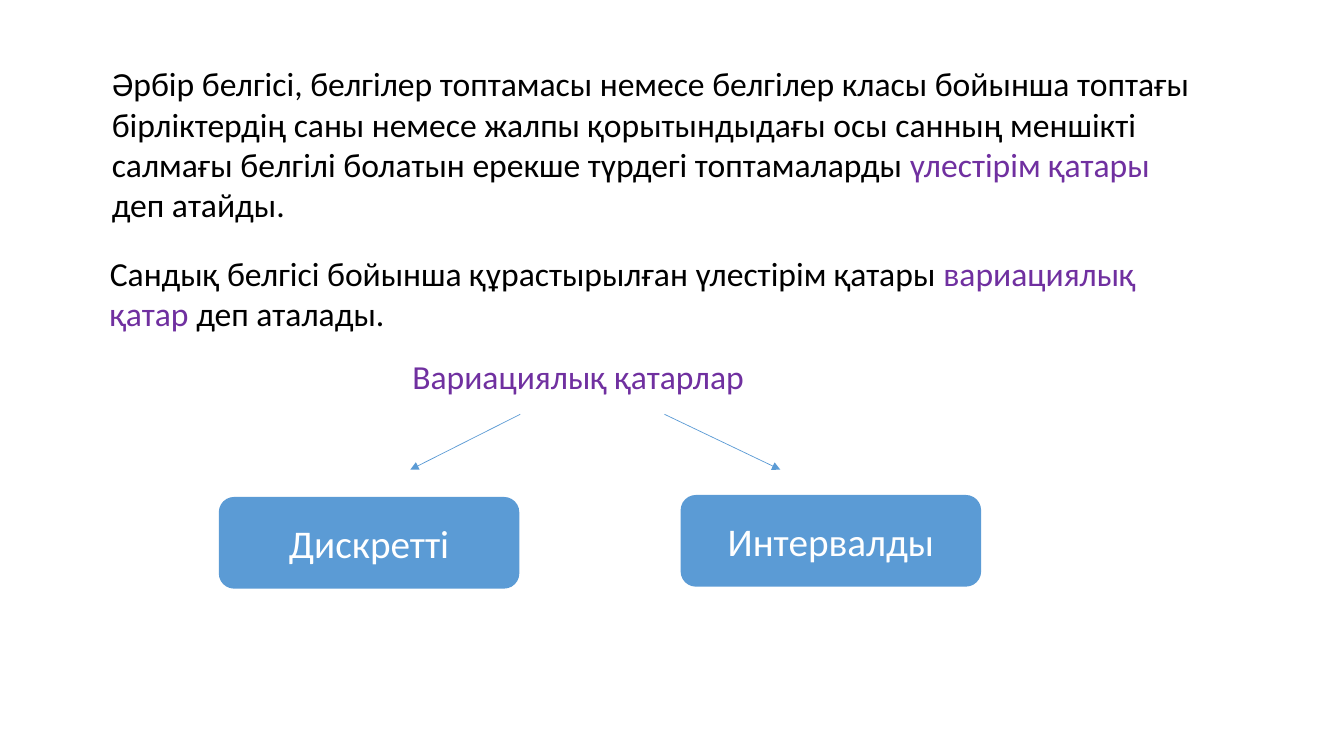
from lxml import etree
from pptx import Presentation
from pptx.dml.color import RGBColor
from pptx.enum.shapes import MSO_CONNECTOR, MSO_SHAPE
from pptx.enum.text import MSO_ANCHOR, MSO_AUTO_SIZE, PP_ALIGN
from pptx.oxml.ns import qn
from pptx.util import Inches, Pt

STRAIGHT = MSO_CONNECTOR.STRAIGHT
ROUNDED = MSO_SHAPE.ROUNDED_RECTANGLE
TOP, MIDDLE = MSO_ANCHOR.TOP, MSO_ANCHOR.MIDDLE
LEFT, CENTER = PP_ALIGN.LEFT, PP_ALIGN.CENTER
NO_FIT = MSO_AUTO_SIZE.NONE

WIDTH, HEIGHT = Inches(13.33), Inches(7.5)
TITLE_ONLY = 5
BLACK, PURPLE, BLUE, WHITE = "000000", "7030A0", "5B9BD5", "FFFFFF"

DEFINITIONS = [
    ((7.58, 7.73, 82.6, 22.93), [
        ("Әрбір белгісі, белгілер топтамасы немесе белгілер класы бойынша топтағы "
         "бірліктердің саны немесе жалпы қорытындыдағы осы санның меншікті салмағы "
         "белгілі болатын ерекше түрдегі топтамаларды ", BLACK),
        ("үлестірім қатары ", PURPLE),
        ("деп атайды.", BLACK),
    ]),
    ((7.43, 32.8, 80.72, 12.13), [
        ("Сандық белгісі бойынша құрастырылған үлестірім қатары ", BLACK),
        ("вариациялық қатар ", PURPLE),
        ("деп аталады.", BLACK),
    ]),
]
HEADING = ((29.93, 46.4, 29.18, 6.67), [("Вариациялық қатарлар", PURPLE)])
ARROWS = [(38.71, 54.8, 30.53, 62.13), (49.44, 54.8, 58.06, 62.13)]
KINDS = [
    ((16.28, 65.73, 22.36, 12.13), "Дискретті"),
    ((50.64, 65.47, 22.36, 12.13), "Интервалды"),
]


def color(value):
    return RGBColor.from_string(value)


def shares(horizontal, vertical):
    return round(WIDTH * horizontal / 100), round(HEIGHT * vertical / 100)


def area(percentages):
    left, top, width, height = percentages
    return *shares(left, top), *shares(width, height)


def apply(target, values):
    for name, value in values.items():
        setattr(target, name, value)


def write(box, spans, size, align, anchor):
    frame = box.text_frame
    apply(frame, {"word_wrap": True, "auto_size": NO_FIT, "vertical_anchor": anchor})
    para = frame.paragraphs[0]
    apply(para, {"alignment": align, "line_spacing": 1.0, "space_before": Pt(0)})
    for text, shade in spans:
        span = para.add_run()
        span.text = text
        apply(span.font, {"name": "Calibri", "size": Pt(size)})
        span.font.color.rgb = color(shade)


def add_definition(page, place, spans):
    box = page.shapes.add_textbox(*area(place))
    write(box, spans, 24, LEFT, TOP)


def set_heading(page, place, spans):
    title = page.shapes.title
    apply(title, dict(zip(("left", "top", "width", "height"), area(place))))
    write(title, spans, 24, LEFT, TOP)


def add_arrow(page, ends):
    arrow = page.shapes.add_connector(STRAIGHT, *shares(*ends[:2]), *shares(*ends[2:]))
    arrow.line.color.rgb = color(BLUE)
    arrow.line.width = Pt(0.5)
    etree.SubElement(arrow.line._get_or_add_ln(), qn("a:tailEnd"), type="triangle")
    etree.SubElement(arrow._element.spPr, qn("a:effectLst"))


def add_kind(page, place, label):
    box = page.shapes.add_shape(ROUNDED, *area(place))
    box.shadow.inherit = False
    box.fill.solid()
    box.fill.fore_color.rgb = color(BLUE)
    box.line.fill.background()
    write(box, [(label, WHITE)], 28, CENTER, MIDDLE)


def main():
    deck = Presentation()
    apply(deck, {"slide_width": WIDTH, "slide_height": HEIGHT})
    page = deck.slides.add_slide(deck.slide_layouts[TITLE_ONLY])
    for place, spans in DEFINITIONS:
        add_definition(page, place, spans)
    set_heading(page, *HEADING)
    for ends in ARROWS:
        add_arrow(page, ends)
    for place, label in KINDS:
        add_kind(page, place, label)
    deck.save("out.pptx")


if __name__ == "__main__":
    main()
